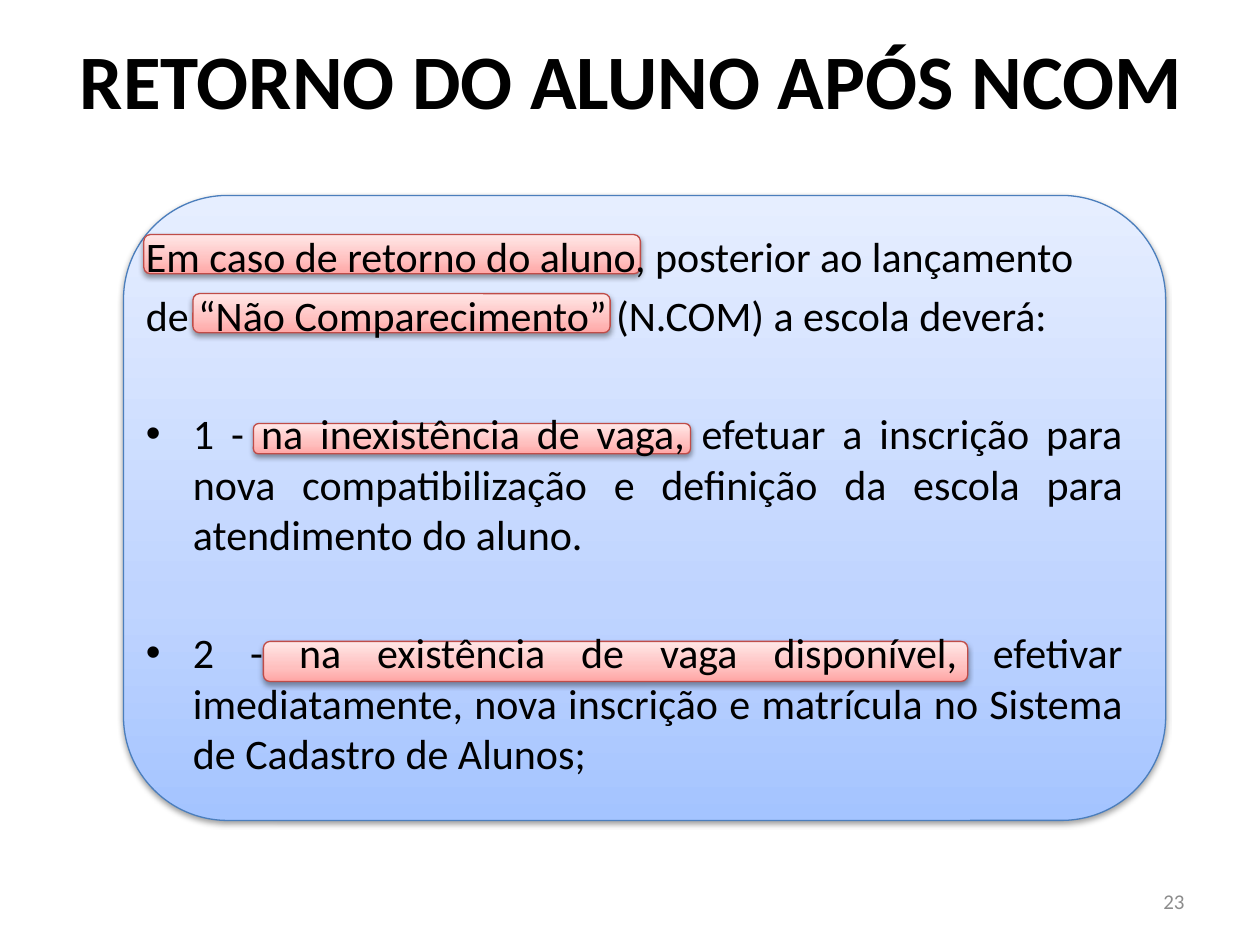
from lxml import etree
from pptx import Presentation
from pptx.dml.color import RGBColor
from pptx.enum.shapes import MSO_SHAPE as Kind
from pptx.enum.text import MSO_ANCHOR as Anchor, PP_ALIGN as Align
from pptx.oxml.ns import qn
from pptx.util import Cm, Pt

BLUE = ("A4C4FF", "BFD4FF", "E6EEFF")
RED = ("FFA6A5", "FFC0BF", "FFE7E7")
STOPS = (0, 35000, 100000)
HANG = Cm(0.95)


def rgb(code):
    return RGBColor.from_string(code)


def node(owner, tag, **attrs):
    return etree.SubElement(owner, qn(tag), {k: str(v) for k, v in attrs.items()})


def shade(shape, tones):
    """Give a shape a rising three-tone gradient."""
    shape.fill.gradient()
    grad = shape.element.spPr.find(qn("a:gradFill"))
    for kid in list(grad):
        grad.remove(kid)
    stops = node(grad, "a:gsLst")
    for pos, tone in zip(STOPS, tones):
        node(node(stops, "a:gs", pos=pos), "a:srgbClr", val=tone)
    node(grad, "a:lin", ang=16200000, scaled=0)


def cast(shape):
    """Drop a soft shadow below a shape."""
    shape.shadow.inherit = False
    effect = shape.element.spPr.find(qn("a:effectLst"))
    drop = node(effect, "a:outerShdw", blurRad=Pt(3.1), dist=Pt(1.6),
                dir=5400000, rotWithShape=0)
    node(node(drop, "a:srgbClr", val="000000"), "a:alpha", val=38000)


def panel(slide, box, tones, edge):
    shape = slide.shapes.add_shape(Kind.ROUNDED_RECTANGLE, *map(Cm, box))
    shade(shape, tones)
    shape.line.color.rgb = rgb(edge)
    shape.line.width = Pt(0.75)
    cast(shape)


def write(frame, text, size=24, color="000000", bold=False, align=Align.LEFT,
          gap=0, hang=False, bullet=False, first=False):
    """Add one paragraph to a text frame."""
    para = frame.paragraphs[0] if first else frame.add_paragraph()
    para.alignment = align
    para.space_before = Pt(gap)
    props = para._p.get_or_add_pPr()
    if hang:
        props.set("marL", str(HANG))
        props.set("indent", str(-HANG))
    if bullet:
        node(props, "a:buFont", typeface="Arial")
        node(props, "a:buChar", char="•")
    run = para.add_run()
    run.text = text
    font = run.font
    font.name, font.size, font.bold = "Calibri", Pt(size), bold
    font.color.rgb = rgb(color)


def frame_in(slide, box, anchor=Anchor.TOP):
    frame = slide.shapes.add_textbox(*map(Cm, box)).text_frame
    frame.word_wrap = True
    frame.vertical_anchor = anchor
    return frame


def title(slide, box):
    write(frame_in(slide, box, Anchor.MIDDLE), "RETORNO DO ALUNO APÓS NCOM",
          size=44, bold=True, align=Align.CENTER, first=True)


def body(slide, box):
    left, top, width, height = box
    panel(slide, box, BLUE, "4B7EBC")

    # Highlights behind the key phrases
    marks = ((1.4, 1.98, 8.41, 0.79), (2.62, 4.6, 8.81, 0.61),
             (2.82, 8.99, 14.2, 0.81), (0.41, 0.79, 10.01, 0.79))
    for x, y, w, h in marks:
        panel(slide, (left + x, top + y, w, h), RED, "BF4C48")

    # Introduction and the two cases
    frame = frame_in(slide, (left + 0.2, top + 0.58, width - 0.81, height - 1.32))
    write(frame, "Em caso de retorno do aluno, posterior ao lançamento",
          hang=True, first=True)
    write(frame, "de “Não Comparecimento” (N.COM) a escola deverá:",
          hang=True, gap=4.8)
    cases = (
        "1 - na inexistência de vaga, efetuar a inscrição para nova "
        "compatibilização e definição da escola para atendimento do aluno.",
        "2 - na existência de vaga disponível, efetivar imediatamente, nova "
        "inscrição e matrícula no Sistema de Cadastro de Alunos;",
    )
    for case in cases:
        write(frame, case, align=Align.JUSTIFY, gap=38.9, hang=True, bullet=True)


def number(slide, box):
    write(frame_in(slide, box, Anchor.MIDDLE), "23", size=12, color="8C8C8C",
          align=Align.RIGHT, first=True)


def main():
    deck = Presentation()
    deck.slide_width, deck.slide_height = Cm(25.4), Cm(19.05)
    slide = deck.slides.add_slide(deck.slide_layouts[6])
    body(slide, (2.49, 3.94, 21.01, 12.6))
    title(slide, (1.3, 0, 22.86, 3.18))
    number(slide, (18.21, 17.65, 5.92, 1.02))
    deck.save("out.pptx")


if __name__ == "__main__":
    main()
